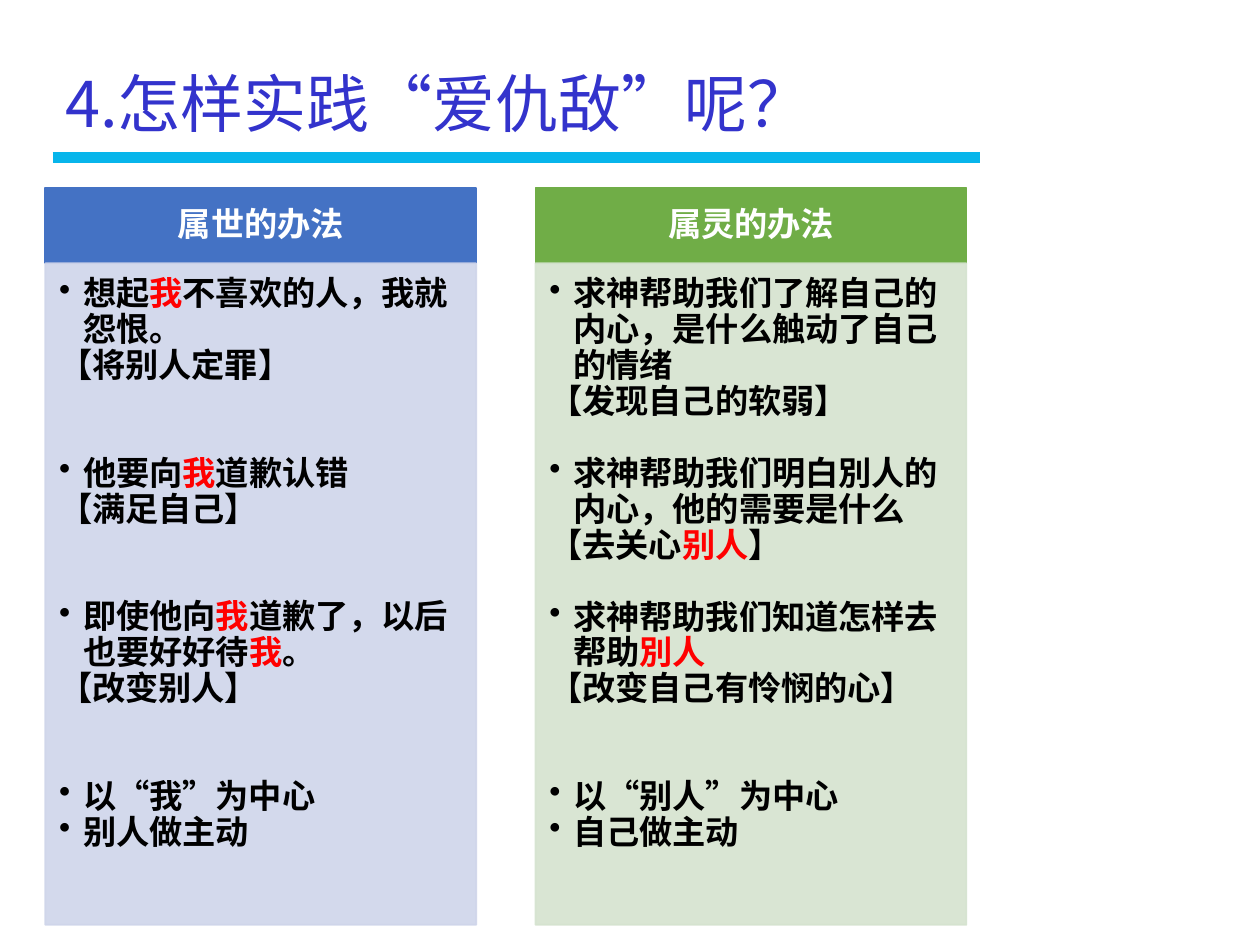
from lxml import etree
from pptx import Presentation
from pptx.dml.color import RGBColor
from pptx.enum.shapes import MSO_CONNECTOR, MSO_SHAPE
from pptx.enum.text import MSO_ANCHOR, PP_ALIGN
from pptx.oxml.ns import qn
from pptx.util import Inches, Pt

STRAIGHT = MSO_CONNECTOR.STRAIGHT
RECT = MSO_SHAPE.RECTANGLE
TOP, MIDDLE, BOTTOM = MSO_ANCHOR.TOP, MSO_ANCHOR.MIDDLE, MSO_ANCHOR.BOTTOM
LEFT, CENTER = PP_ALIGN.LEFT, PP_ALIGN.CENTER
FONT = "Noto Sans CJK SC"
BODY_SIZE = 19
LINE_PITCH = 20.5
INDENT = 0.19

# (blank lines above, bulleted, text); asterisks enclose red words
WORLDLY = [
    (0, True, "想起*我*不喜欢的人，我就怨恨。"),
    (0, False, "【将别人定罪】"),
    (2, True, "他要向*我*道歉认错"),
    (0, False, "【满足自己】"),
    (2, True, "即使他向*我*道歉了，以后也要好好待*我*。"),
    (0, False, "【改变别人】"),
    (2, True, "以“我”为中心"),
    (0, True, "别人做主动"),
]
SPIRITUAL = [
    (0, True, "求神帮助我们了解自己的内心，是什么触动了自己的情绪"),
    (0, False, "【发现自己的软弱】"),
    (1, True, "求神帮助我们明白別人的内心，他的需要是什么"),
    (0, False, "【去关心*别人*】"),
    (1, True, "求神帮助我们知道怎样去帮助*別人*"),
    (0, False, "【改变自己有怜悯的心】"),
    (2, True, "以“别人”为中心"),
    (0, True, "自己做主动"),
]
COLUMNS = [
    (0.36, "属世的办法", "4472C4", "CFD5EA", WORLDLY),
    (4.25, "属灵的办法", "70AD47", "D5E3CF", SPIRITUAL),
]


def rgb(value):
    return RGBColor.from_string(value)


def add_text(p, text, size=BODY_SIZE, color="000000", bold=True, align=LEFT):
    p.alignment = align
    p.line_spacing = 0.9
    for i, part in enumerate(text.split("*")):
        if part:
            r = p.add_run()
            r.text = part
            r.font.size = Pt(size)
            r.font.bold = bold
            r.font.name = FONT
            r.font.color.rgb = rgb("FF0000" if i % 2 else color)
            ea = etree.SubElement(r.font._element, qn("a:ea"))
            ea.set("typeface", FONT)


def set_frame(tf, anchor, left, top, right, bottom):
    tf.word_wrap = True
    tf.vertical_anchor = anchor
    tf.margin_left, tf.margin_top = Inches(left), Inches(top)
    tf.margin_right, tf.margin_bottom = Inches(right), Inches(bottom)


def set_indent(p, bulleted):
    pPr = p._p.get_or_add_pPr()
    pPr.set("marL", str(Inches(INDENT)))
    pPr.set("indent", str(-Inches(INDENT)))
    if bulleted:
        etree.SubElement(pPr, qn("a:buChar")).set("char", "•")
    else:
        etree.SubElement(pPr, qn("a:buNone"))


def add_rule(s, left, right, y):
    rule = s.shapes.add_connector(
        STRAIGHT, Inches(left), Inches(y), Inches(right), Inches(y))
    rule.line.color.rgb = rgb("07B5EB")
    rule.line.width = Pt(6)
    etree.SubElement(rule._element.spPr, qn("a:effectLst"))


def add_panel(s, left, top, width, height, color, opacity=100):
    sp = s.shapes.add_shape(
        RECT, Inches(left), Inches(top), Inches(width), Inches(height))
    sp.shadow.inherit = False
    sp.fill.solid()
    sp.fill.fore_color.rgb = rgb(color)
    sp.line.color.rgb = rgb(color)
    sp.line.width = Pt(1)
    if opacity < 100:
        for clr in sp._element.spPr.iter(qn("a:srgbClr")):
            etree.SubElement(clr, qn("a:alpha")).set("val", str(opacity * 1000))
    return sp


def add_title(s, text):
    sp = s.shapes.add_textbox(Inches(0.47), Inches(0.52), Inches(7.07), Inches(0.65))
    set_frame(sp.text_frame, BOTTOM, 0.05, 0.05, 0.05, 0.05)
    add_text(sp.text_frame.paragraphs[0], text, size=36, color="3333CC", bold=False)


def add_column(s, left, heading, head_color, body_color, items):
    head = add_panel(s, left, 1.49, 3.42, 0.6, head_color)
    set_frame(head.text_frame, MIDDLE, 0.15, 0.08, 0.15, 0.08)
    add_text(head.text_frame.paragraphs[0], heading, color="FFFFFF", align=CENTER)

    body = add_panel(s, left, 2.09, 3.42, 5.25, body_color, opacity=90)
    tf = body.text_frame
    set_frame(tf, TOP, 0.11, 0.11, 0.15, 0.17)
    for i, (gap, bulleted, text) in enumerate(items):
        p = tf.add_paragraph() if i else tf.paragraphs[0]
        set_indent(p, bulleted)
        if gap:
            p.space_before = Pt(gap * LINE_PITCH)
        add_text(p, text)


def main():
    prs = Presentation()
    prs.slide_width, prs.slide_height = Inches(10), Inches(7.5)
    s = prs.slides.add_slide(prs.slide_layouts[6])
    for right in (7.78, 7.42):
        add_rule(s, 0.42, right, 1.25)
    add_title(s, "4.怎样实践“爱仇敌”呢？")
    for column in COLUMNS:
        add_column(s, *column)
    prs.save("out.pptx")


if __name__ == "__main__":
    main()
